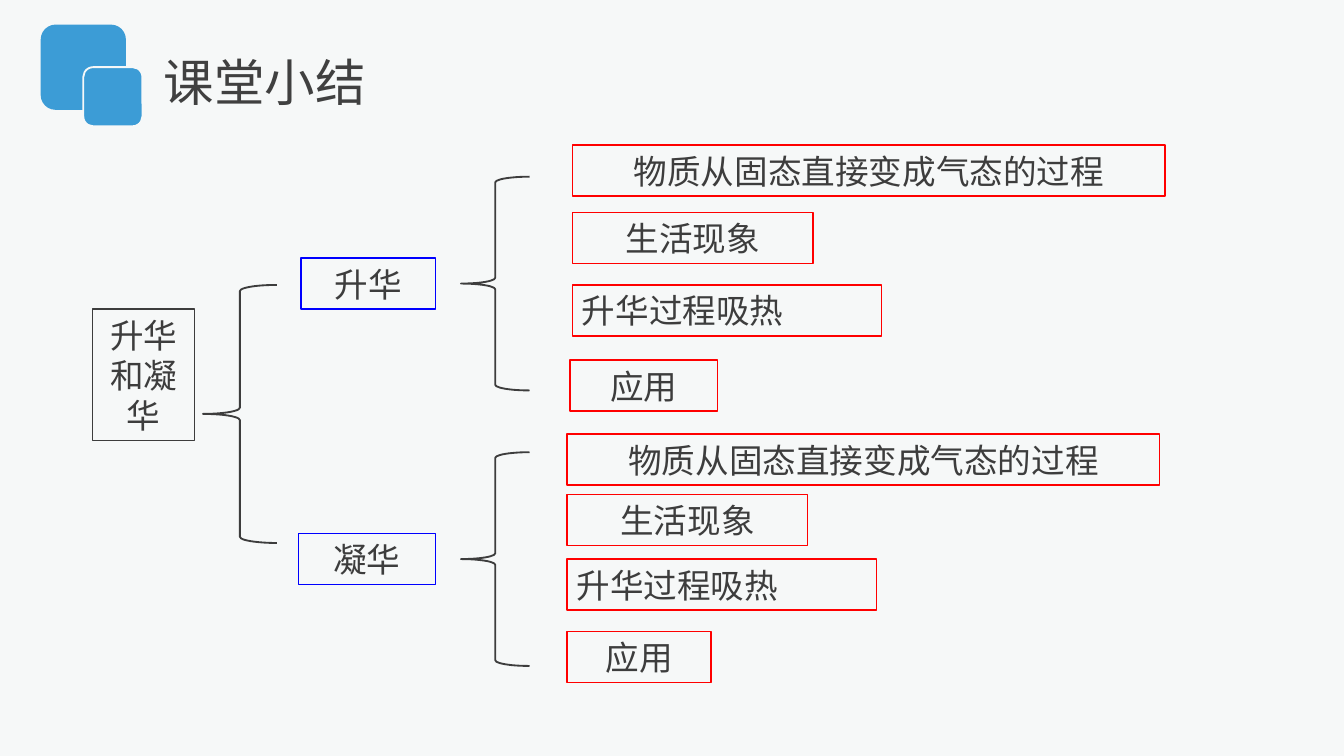
from pptx import Presentation
from pptx.dml.color import RGBColor
from pptx.enum.shapes import MSO_SHAPE
from pptx.enum.text import MSO_ANCHOR, PP_ALIGN
from pptx.util import Emu, Inches, Pt

PX = 9144  # 100 px to the inch
FONT = "Arial"
BACKGROUND, ACCENT = "F6F8F8", "3C9CD6"
INK, TITLE_INK = "3D3D3D", "404040"
TOPIC_LINE, DETAIL_LINE = "0000FF", "FF0000"

TITLE = ("课堂小结", (115, 34, 178, 53))
# left, top, size, line colour
LOGO_SQUARES = [(31, 19, 62, ACCENT), (62, 50, 44, BACKGROUND)]
ROOT = ("升华和凝华", (69, 230, 76, 98))
ROOT_BRACE = (151, 212, 55, 192)

BOX_HEIGHT = 38
BRACE_LEFT, BRACE_WIDTH, BRACE_HEIGHT = 343, 51, 159
# Topic: text, left, top, width; each detail likewise, with its alignment
BRANCHES = [
    (("升华", 224, 192, 100), [
        ("物质从固态直接变成气态的过程", 426, 108, 441, PP_ALIGN.CENTER),
        ("生活现象", 426, 158, 179, PP_ALIGN.CENTER),
        ("升华过程吸热", 426, 212, 230, PP_ALIGN.LEFT),
        ("应用", 424, 268, 110, PP_ALIGN.CENTER),
    ]),
    (("凝华", 222, 397, 102), [
        ("物质从固态直接变成气态的过程", 422, 323, 441, PP_ALIGN.CENTER),
        ("生活现象", 422, 368, 179, PP_ALIGN.CENTER),
        ("升华过程吸热", 422, 416, 230, PP_ALIGN.LEFT),
        ("应用", 422, 470, 107, PP_ALIGN.CENTER),
    ]),
]


def rgb(color):
    return RGBColor.from_string(color)


def emu(*lengths):
    return [Emu(round(length * PX)) for length in lengths]


def write(shape, text, size, color, alignment):
    frame = shape.text_frame
    frame.word_wrap = True
    frame.vertical_anchor = MSO_ANCHOR.TOP
    frame.margin_left, frame.margin_right = emu(7, 7)
    frame.margin_top, frame.margin_bottom = emu(4, 4)
    paragraph = frame.paragraphs[0]
    paragraph.text = text
    paragraph.alignment = alignment
    paragraph.font.name = FONT
    paragraph.font.size = Pt(size)
    paragraph.font.color.rgb = rgb(color)


def add_outline(slide, kind, bounds, line, width=1, fill=None):
    shape = slide.shapes.add_shape(kind, *emu(*bounds))
    shape.shadow.inherit = False
    if fill:
        shape.fill.solid()
        shape.fill.fore_color.rgb = rgb(fill)
    else:
        shape.fill.background()
    shape.line.color.rgb = rgb(line)
    shape.line.width = Pt(width)
    return shape


def add_box(slide, text, bounds, line, alignment=PP_ALIGN.CENTER):
    box = add_outline(slide, MSO_SHAPE.RECTANGLE, bounds, line, 0.75)
    write(box, text, 18, INK, alignment)


def add_brace(slide, bounds):
    add_outline(slide, MSO_SHAPE.LEFT_BRACE, bounds, INK)


def add_branch(slide, topic, details):
    """Draw a topic, its details and a brace whose tip is level with the topic."""
    text, left, top, width = topic
    add_box(slide, text, (left, top, width, BOX_HEIGHT), TOPIC_LINE)
    brace_top = top + (BOX_HEIGHT - BRACE_HEIGHT) / 2
    add_brace(slide, (BRACE_LEFT, brace_top, BRACE_WIDTH, BRACE_HEIGHT))
    for text, left, top, width, alignment in details:
        add_box(slide, text, (left, top, width, BOX_HEIGHT), DETAIL_LINE, alignment)


def main():
    presentation = Presentation()
    presentation.slide_width = Inches(10)
    presentation.slide_height = Inches(5.625)
    slide = presentation.slides.add_slide(presentation.slide_layouts[6])
    slide.background.fill.solid()
    slide.background.fill.fore_color.rgb = rgb(BACKGROUND)

    for left, top, size, line in LOGO_SQUARES:
        add_outline(slide, MSO_SHAPE.ROUNDED_RECTANGLE,
                    (left, top, size, size), line, fill=ACCENT)
    text, bounds = TITLE
    title = slide.shapes.add_textbox(*emu(*bounds))
    write(title, text, 27, TITLE_INK, PP_ALIGN.LEFT)

    add_box(slide, *ROOT, INK)
    add_brace(slide, ROOT_BRACE)
    for topic, details in BRANCHES:
        add_branch(slide, topic, details)

    presentation.save("out.pptx")


if __name__ == "__main__":
    main()
